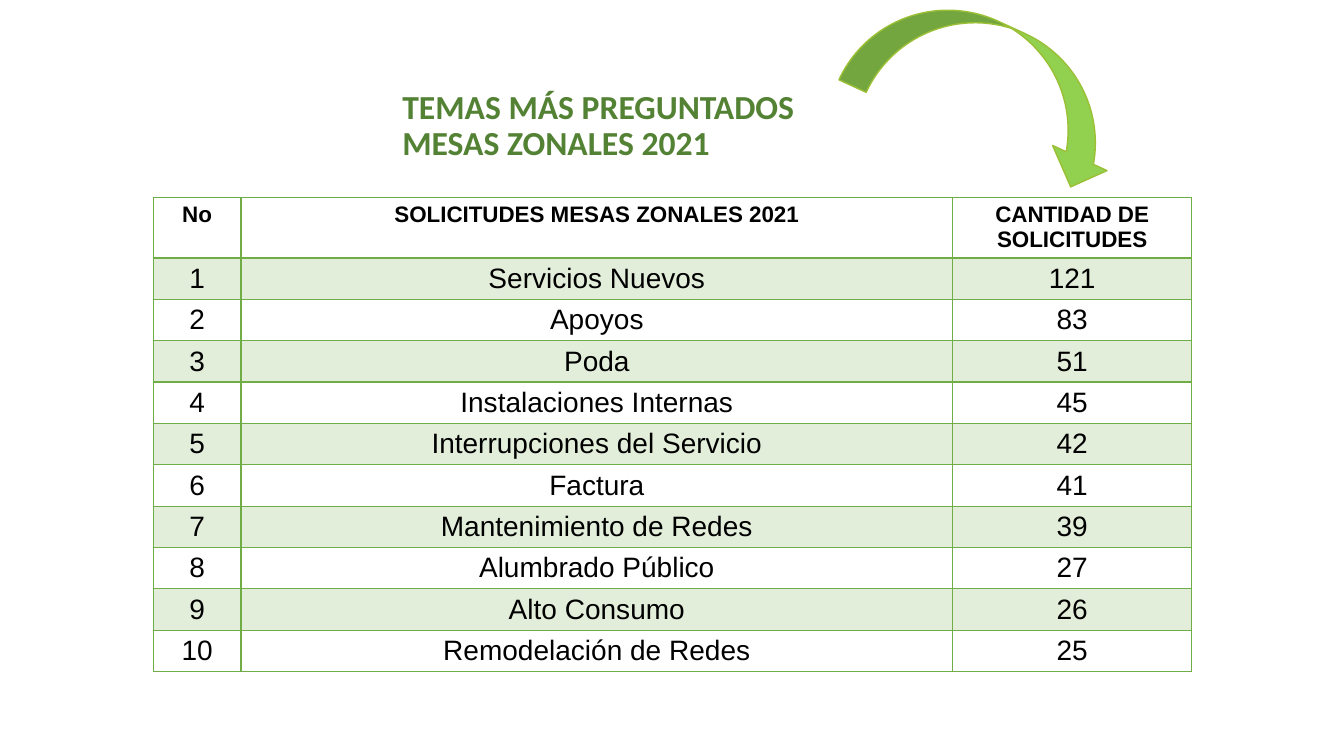
"""Build the slide with the topics most asked about in the 2021 zonal meetings."""
import dataclasses

import lxml.etree
import pptx
import pptx.dml.color
import pptx.enum.shapes
import pptx.enum.text
import pptx.oxml.ns
import pptx.util

TITLE = "TEMAS MÁS PREGUNTADOS MESAS ZONALES 2021"
HEADER = ("No", "SOLICITUDES MESAS ZONALES 2021", "CANTIDAD DE SOLICITUDES")
REQUESTS = [
    ("Servicios Nuevos", 121),
    ("Apoyos", 83),
    ("Poda", 51),
    ("Instalaciones Internas", 45),
    ("Interrupciones del Servicio", 42),
    ("Factura", 41),
    ("Mantenimiento de Redes", 39),
    ("Alumbrado Público", 27),
    ("Alto Consumo", 26),
    ("Remodelación de Redes", 25),
]

EMU_PER_PX = 9144
SLIDE_SIZE = (1333, 750)
TITLE_BOX = (389, 53, 444, 145)
ARROW_BOX = (844, 25, 283, 119)
ARROW_TURN = 24.8
TABLE_CORNER = (152, 196)
COLUMN_WIDTHS = (87, 706, 237)
HEADER_HEIGHT, ROW_HEIGHT = 60, 41


@dataclasses.dataclass(frozen=True)
class Theme:
    """Colours, fonts and type sizes of the slide."""
    green: str = "70AD47"
    title_green: str = "548235"
    arrow_green: str = "92D050"
    arrow_edge: str = "9BC035"
    text: str = "000000"
    title_font: str = "Calibri"
    table_font: str = "Arial"
    title_size: int = 24
    header_size: int = 16
    body_size: int = 20
    band_opacity: int = 20
    line: int = 1
    header_line: int = 2


THEME = Theme()


def emu(lengths):
    """Turn px lengths into EMU."""
    return [pptx.util.Emu(length * EMU_PER_PX) for length in lengths]


def rgb(colour):
    """Give the colour object of a hex string."""
    return pptx.dml.color.RGBColor.from_string(colour)


def write(frame, text, name, size, colour, bold, **layout):
    """Put one formatted paragraph in a text frame."""
    para = frame.paragraphs[0]
    for key, value in layout.items():
        setattr(para, key, value)
    span = para.add_run()
    span.text = text
    font = {"name": name, "size": pptx.util.Pt(size), "bold": bold}
    for key, value in font.items():
        setattr(span.font, key, value)
    span.font.color.rgb = rgb(colour)


def add_element(parent, tag, **attributes):
    """Append a drawing element with its attributes."""
    element = lxml.etree.SubElement(parent, pptx.oxml.ns.qn(tag))
    for key, value in attributes.items():
        element.set(key, str(value))
    return element


def draw_borders(cell, widths):
    """Draw the four cell edges, given as side and points."""
    properties = cell._tc.get_or_add_tcPr()
    for side, width in widths.items():
        edge = add_element(properties, f"a:ln{side}", w=pptx.util.Pt(width))
        add_element(add_element(edge, "a:solidFill"), "a:srgbClr", val=THEME.green)


def fill_band(cell):
    """Fill a cell with see-through green."""
    cell.fill.solid()
    cell.fill.fore_color.rgb = rgb(THEME.green)
    colour = cell._tc.tcPr.find("/".join(map(pptx.oxml.ns.qn, ("a:solidFill", "a:srgbClr"))))
    add_element(colour, "a:alpha", val=THEME.band_opacity * 1000)


def add_title(page):
    """Move and format the title placeholder."""
    title = page.shapes.title
    title.left, title.top, title.width, title.height = emu(TITLE_BOX)
    frame = title.text_frame
    settings = {
        "word_wrap": True,
        "auto_size": pptx.enum.text.MSO_AUTO_SIZE.NONE,
        "vertical_anchor": pptx.enum.text.MSO_ANCHOR.MIDDLE,
    }
    for key, value in settings.items():
        setattr(frame, key, value)
    write(frame, TITLE, THEME.title_font, THEME.title_size, THEME.title_green, True,
          alignment=pptx.enum.text.PP_ALIGN.LEFT, line_spacing=0.9)


def add_table(page):
    """Add the table of requests with banded rows."""
    rows = [HEADER] + [(number, *request) for number, request in enumerate(REQUESTS, 1)]
    heights = [HEADER_HEIGHT] + [ROW_HEIGHT] * len(REQUESTS)
    area = emu((*TABLE_CORNER, sum(COLUMN_WIDTHS), sum(heights)))
    table = page.shapes.add_table(len(rows), len(HEADER), *area).table
    table.first_row = table.horz_banding = False
    for column, width in zip(table.columns, emu(COLUMN_WIDTHS)):
        column.width = width
    for row, height in zip(table.rows, emu(heights)):
        row.height = height
    for row_index, values in enumerate(rows):
        is_header = row_index == 0
        size = THEME.header_size if is_header else THEME.body_size
        top = THEME.header_line if row_index == 1 else THEME.line
        bottom = THEME.header_line if is_header else THEME.line
        for column_index, value in enumerate(values):
            cell = table.cell(row_index, column_index)
            write(cell.text_frame, str(value), THEME.table_font, size, THEME.text,
                  is_header, alignment=pptx.enum.text.PP_ALIGN.CENTER)
            draw_borders(cell, {"L": THEME.line, "R": THEME.line, "T": top, "B": bottom})
            if row_index % 2:
                fill_band(cell)
            else:
                cell.fill.background()


def add_arrow(page):
    """Add the curved arrow that points at the amounts."""
    kind = pptx.enum.shapes.MSO_SHAPE.CURVED_DOWN_ARROW
    arrow = page.shapes.add_shape(kind, *emu(ARROW_BOX))
    arrow.rotation = ARROW_TURN
    arrow.shadow.inherit = False
    arrow.fill.solid()
    arrow.fill.fore_color.rgb = rgb(THEME.arrow_green)
    arrow.line.color.rgb = rgb(THEME.arrow_edge)
    arrow.line.width = pptx.util.Pt(THEME.line)


def main():
    """Build and save the deck."""
    deck = pptx.Presentation()
    deck.slide_width, deck.slide_height = emu(SLIDE_SIZE)
    page = deck.slides.add_slide(deck.slide_layouts.get_by_name("Title Only"))
    add_table(page)
    add_arrow(page)
    add_title(page)
    deck.save("out.pptx")


if __name__ == "__main__":
    main()
